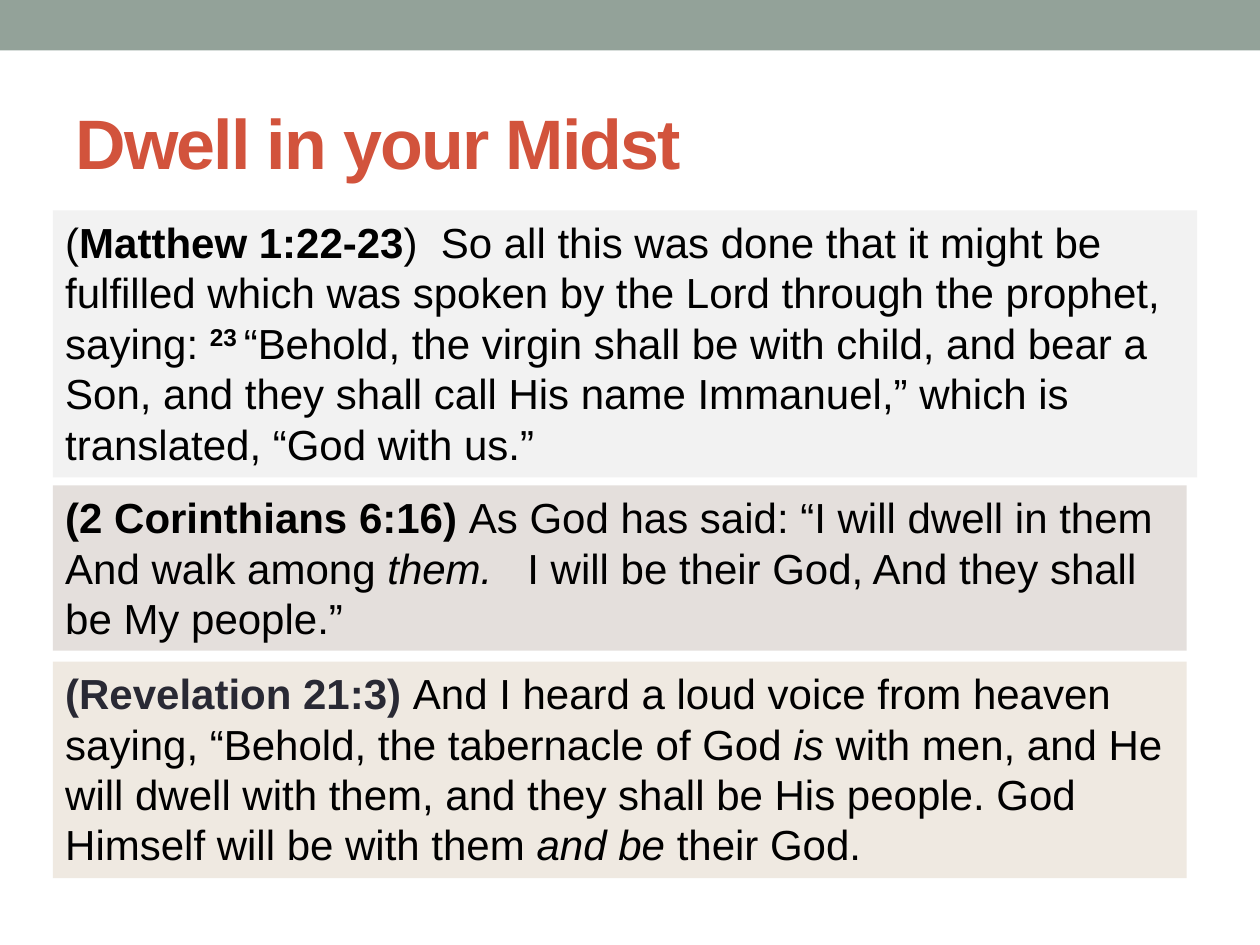
from dataclasses import dataclass

from pptx import Presentation
from pptx.dml.color import RGBColor
from pptx.enum.shapes import MSO_SHAPE as SHAPE
from pptx.enum.text import MSO_ANCHOR as ANCHOR, MSO_AUTO_SIZE as AUTO, PP_ALIGN as ALIGN
from pptx.slide import Slide
from pptx.text.text import _Paragraph as Paragraph
from pptx.util import Pt

FONT = "Arial"
BLACK = RGBColor(0x00, 0x00, 0x00)
INK = RGBColor(0x29, 0x29, 0x34)
SAGE = RGBColor(0x93, 0xA2, 0x99)
RUST = RGBColor(0xD2, 0x53, 0x3C)
GREY = RGBColor(0xF2, 0xF2, 0xF2)
MAUVE = RGBColor(0xE4, 0xDF, 0xDC)
SAND = RGBColor(0xEF, 0xE9, 0xE1)


@dataclass(frozen=True)
class Span:
    text: str
    bold: bool = False
    italic: bool = False
    raised: bool = False
    color: RGBColor = BLACK


@dataclass(frozen=True)
class Verse:
    top: float
    width: float
    height: float
    fill: RGBColor
    spans: tuple[Span, ...]


VERSES = (
    Verse(120.2, 654, 152.6, GREY, (
        Span("("),
        Span("Matthew 1:22-23", bold=True),
        Span(")  So all this was done that it might be fulfilled which was spoken "
             "by the Lord through the prophet, saying: "),
        Span("23 ", bold=True, raised=True),
        Span("“Behold, the virgin shall be with child, and bear a Son, and they shall "
             "call His name Immanuel,” which is translated, “God with us.”"),
    )),
    Verse(277.4, 648, 94.4, MAUVE, (
        Span("(2 Corinthians 6:16) ", bold=True),
        Span("As God has said: “I will dwell in them\nAnd walk among "),
        Span("them.   ", italic=True),
        Span("I will be their God, And they shall be My people.”"),
    )),
    Verse(378, 648, 123.8, SAND, (
        Span("(Revelation 21:3) ", bold=True, color=INK),
        Span("And I heard a loud voice from heaven saying, “Behold, "
             "the tabernacle of God "),
        Span("is", italic=True),
        Span(" with men, and He will dwell with them, and they shall be His people. "
             "God Himself will be with them "),
        Span("and be", italic=True),
        Span(" their God."),
    )),
)


def add_box(s: Slide, left: float, top: float, width: float, height: float, fill: RGBColor):
    sp = s.shapes.add_shape(SHAPE.RECTANGLE, Pt(left), Pt(top), Pt(width), Pt(height))
    sp.shadow.inherit = False
    sp.fill.solid()
    sp.fill.fore_color.rgb = fill
    sp.line.fill.background()
    return sp


def add_span(p: Paragraph, span: Span) -> None:
    for i, line in enumerate(span.text.split("\n")):
        if i:
            p.add_line_break()
        r = p.add_run()
        r.text = line
        r.font.bold = span.bold
        r.font.italic = span.italic
        r.font.color.rgb = span.color
        if span.raised:
            r.font._element.set("baseline", "30000")


def add_verse(s: Slide, verse: Verse) -> None:
    sp = add_box(s, 30.2, verse.top, verse.width, verse.height, verse.fill)
    tf = sp.text_frame
    tf.word_wrap = True
    tf.auto_size = AUTO.SHAPE_TO_FIT_TEXT
    tf.vertical_anchor = ANCHOR.TOP
    p = tf.paragraphs[0]
    p.alignment = ALIGN.LEFT
    p.font.name = FONT
    p.font.size = Pt(24)
    for span in verse.spans:
        add_span(p, span)


def add_title(s: Slide, text: str) -> None:
    tf = s.shapes.add_textbox(Pt(36), Pt(41.8), Pt(648), Pt(77.8)).text_frame
    tf.word_wrap = True
    tf.vertical_anchor = ANCHOR.MIDDLE
    p = tf.paragraphs[0]
    p.font.name = FONT
    p.font.size = Pt(40)
    p.font.bold = True
    p.font.color.rgb = RUST
    r = p.add_run()
    r.text = text
    r.font._element.set("spc", "-100")


def main() -> None:
    """Build the slide of three Bible verses."""
    prs = Presentation()
    prs.slide_width, prs.slide_height = Pt(720), Pt(540)
    s = prs.slides.add_slide(prs.slide_layouts[6])
    add_box(s, 0, 0, 720, 28.8, SAGE)
    add_title(s, "Dwell in your Midst")
    for verse in VERSES:
        add_verse(s, verse)
    prs.save("out.pptx")


if __name__ == "__main__":
    main()
